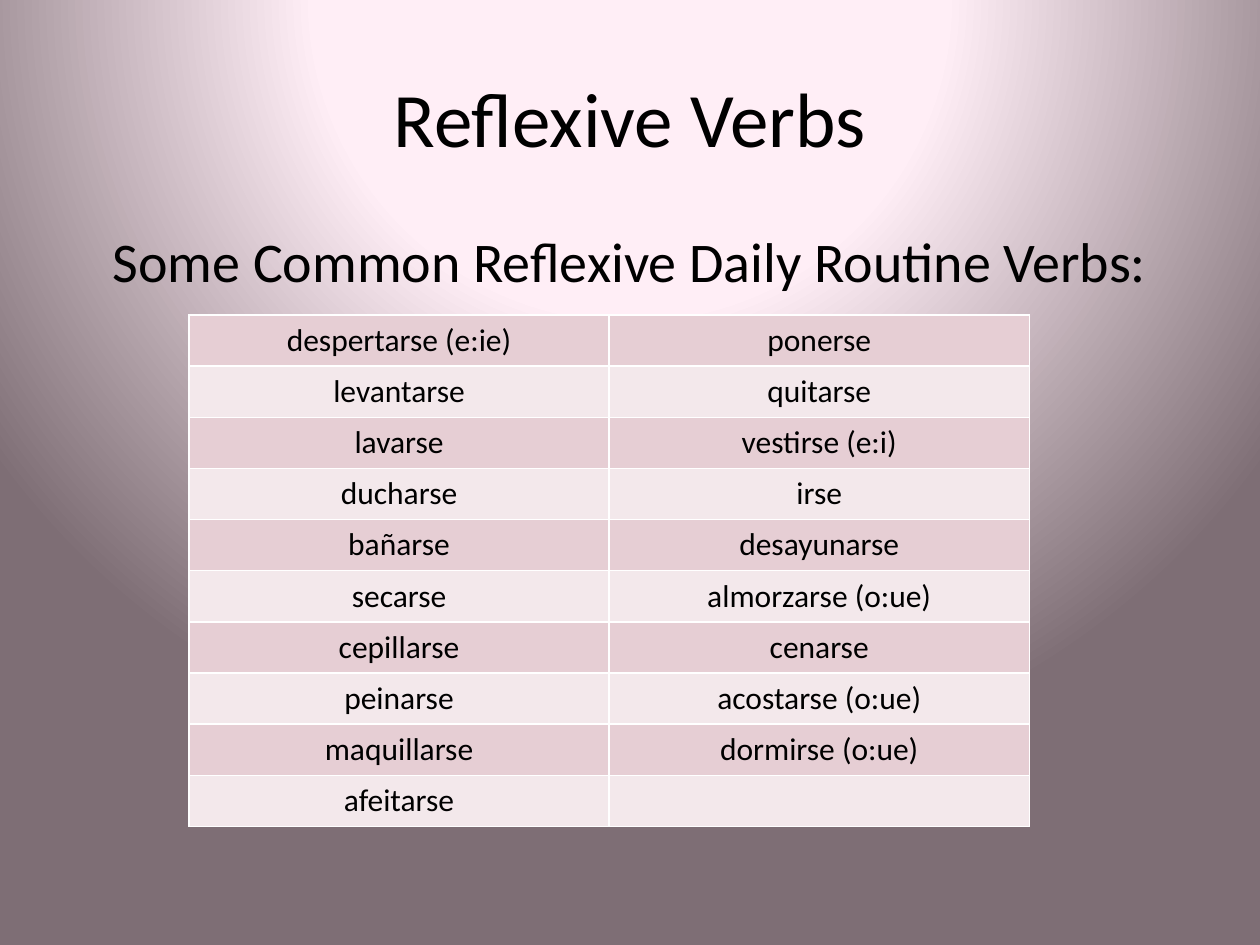
import pptx
import pptx.dml.color
import pptx.enum.text
import pptx.oxml
import pptx.oxml.ns
import pptx.util

Inches = pptx.util.Inches

title = "Reflexive Verbs"
subtitle = "Some Common Reflexive Daily Routine Verbs:"
verbs = [
    ("despertarse (e:ie)", "ponerse"),
    ("levantarse", "quitarse"),
    ("lavarse", "vestirse (e:i)"),
    ("ducharse", "irse"),
    ("bañarse", "desayunarse"),
    ("secarse", "almorzarse (o:ue)"),
    ("cepillarse", "cenarse"),
    ("peinarse", "acostarse (o:ue)"),
    ("maquillarse", "dormirse (o:ue)"),
    ("afeitarse", ""),
]

theme = {
    "font": "Calibri",
    "ink": "000000",
    "bands": ("E6CED4", "F3E8EB"),
    "rule": "FFFFFF",
    "rule_width": 1,
    "glow": [(0, "FFF1F8"), (40, "FFEEF6"), (100, "7E6E75")],
    "title_size": 44,
    "subtitle_size": 32,
    "verb_size": 18,
}

anchors = pptx.enum.text.MSO_ANCHOR
headings = [
    (title, (0.5, 0.3, 9, 1.25), theme["title_size"], anchors.MIDDLE),
    (subtitle, (0.5, 1.75, 9, 4.95), theme["subtitle_size"], anchors.TOP),
]
table_left, table_top = 1.5, 2.5
table_width, table_height = 6.67, 4.06


def color(value):
    return pptx.dml.color.RGBColor.from_string(value)


def apply_format(target, values):
    for attribute, value in values.items():
        setattr(target, attribute, value)


def write(frame, words, size):
    paragraph = frame.paragraphs[0]
    paragraph.alignment = pptx.enum.text.PP_ALIGN.CENTER
    paragraph.font.size = pptx.util.Pt(size)
    if words:
        run = paragraph.add_run()
        run.text = words
        apply_format(run.font, {"name": theme["font"], "size": pptx.util.Pt(size)})
        run.font.color.rgb = color(theme["ink"])


def paint_background(slide):
    stops = "".join(
        f'<a:gs pos="{position * 1000}"><a:srgbClr val="{shade}"/></a:gs>'
        for position, shade in theme["glow"]
    )
    background = pptx.oxml.parse_xml(
        f'<p:bg {pptx.oxml.ns.nsdecls("p", "a")}><p:bgPr><a:gradFill rotWithShape="1">'
        f'<a:gsLst>{stops}</a:gsLst><a:path path="circle">'
        '<a:fillToRect l="50000" t="-80000" r="50000" b="180000"/></a:path>'
        "</a:gradFill><a:effectLst/></p:bgPr></p:bg>"
    )
    slide.element.cSld.insert(0, background)


def rule_cell(cell):
    properties = cell._tc.get_or_add_tcPr()
    width = pptx.util.Pt(theme["rule_width"])
    for position, side in enumerate(("lnL", "lnR", "lnT", "lnB")):
        border = pptx.oxml.parse_xml(
            f'<a:{side} {pptx.oxml.ns.nsdecls("a")} w="{width}"><a:solidFill>'
            f'<a:srgbClr val="{theme["rule"]}"/></a:solidFill></a:{side}>'
        )
        properties.insert(position, border)


def add_heading(slide, words, box, size, anchor):
    frame = slide.shapes.add_textbox(*map(Inches, box)).text_frame
    apply_format(frame, {"word_wrap": True, "vertical_anchor": anchor})
    write(frame, words, size)


def add_verbs(slide):
    area = map(Inches, (table_left, table_top, table_width, table_height))
    grid = slide.shapes.add_table(len(verbs), len(verbs[0]), *area).table
    apply_format(grid, {"first_row": False, "horz_banding": False})
    for row, pair in enumerate(verbs):
        grid.rows[row].height = Inches(table_height / len(verbs))
        for column, verb in enumerate(pair):
            cell = grid.cell(row, column)
            cell.fill.solid()
            cell.fill.fore_color.rgb = color(theme["bands"][row % 2])
            rule_cell(cell)
            write(cell.text_frame, verb, theme["verb_size"])


def main():
    deck = pptx.Presentation()
    apply_format(deck, {"slide_width": Inches(10), "slide_height": Inches(7.5)})
    slide = deck.slides.add_slide(deck.slide_layouts[6])
    paint_background(slide)
    for heading in headings:
        add_heading(slide, *heading)
    add_verbs(slide)
    deck.save("out.pptx")


if __name__ == "__main__":
    main()
